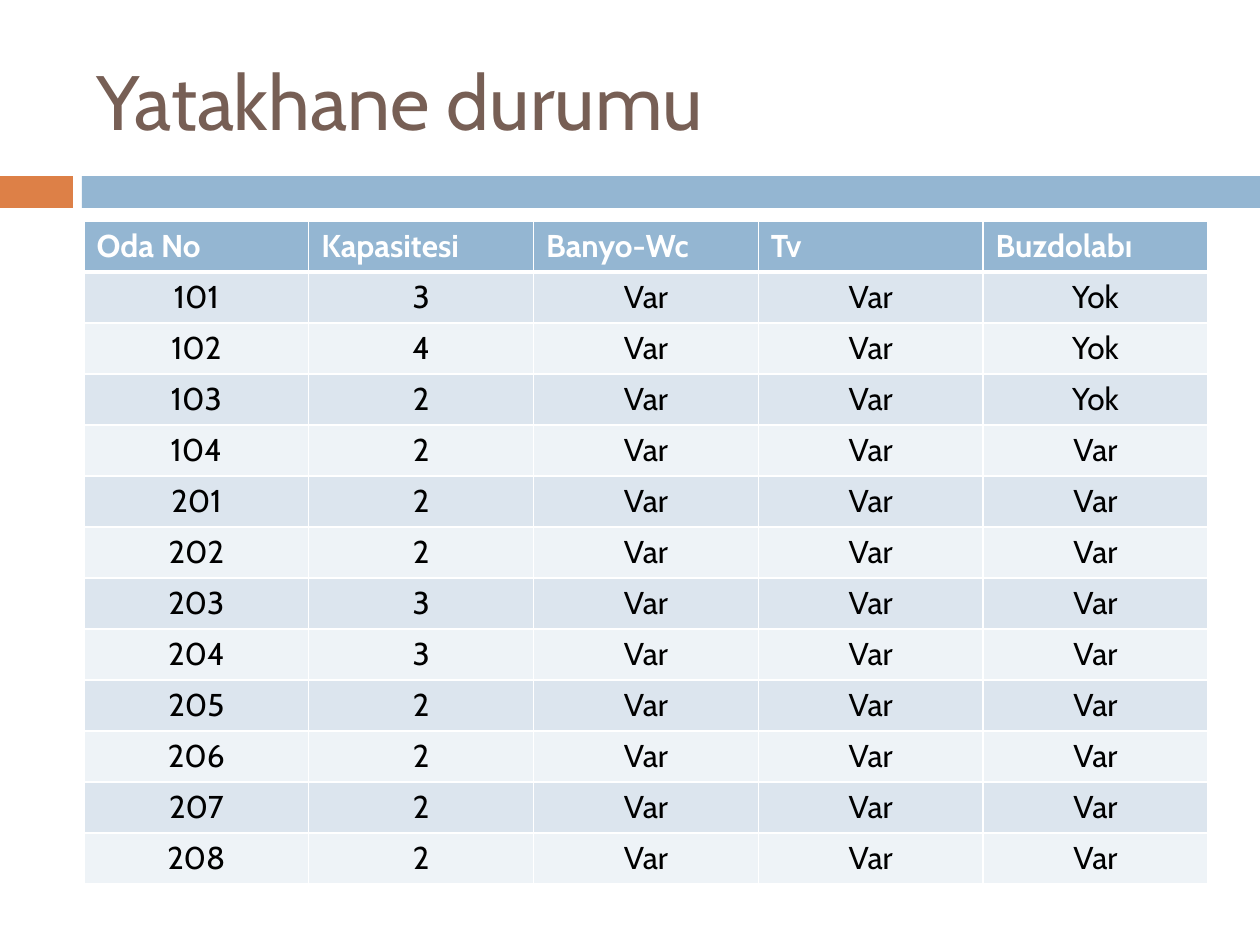
import pptx
import pptx.dml.color
import pptx.enum.shapes
import pptx.enum.text
import pptx.oxml
import pptx.oxml.ns
import pptx.util

PX = 914400 / 126  # EMU in one pixel
FONT = "Cabin"
WHITE = pptx.dml.color.RGBColor(0xFF, 0xFF, 0xFF)
BLACK = pptx.dml.color.RGBColor(0x00, 0x00, 0x00)
BROWN = pptx.dml.color.RGBColor(0x77, 0x5F, 0x55)
ORANGE = pptx.dml.color.RGBColor(0xDD, 0x80, 0x47)
BLUE = pptx.dml.color.RGBColor(0x94, 0xB6, 0xD2)
BAND_DARK = pptx.dml.color.RGBColor(0xDC, 0xE5, 0xEE)
BAND_LIGHT = pptx.dml.color.RGBColor(0xEE, 0xF3, 0xF7)

HEADERS = ["Oda No", "Kapasitesi", "Banyo-Wc", "Tv", "Buzdolabı"]
CAPACITIES = {
    "101": "3", "102": "4", "103": "2", "104": "2",
    "201": "2", "202": "2", "203": "3", "204": "3",
    "205": "2", "206": "2", "207": "2", "208": "2",
}
ROOMS_WITHOUT_FRIDGE = ["101", "102", "103"]


def add_text(paragraph, text, size, color, bold=False):
    run = paragraph.add_run()
    run.text = text
    run.font.name = FONT
    run.font.size = pptx.util.Pt(size)
    run.font.color.rgb = color
    run.font.bold = bold


def add_border(cell, side, points):
    cell._tc.get_or_add_tcPr().append(pptx.oxml.parse_xml(
        f'<a:{side} {pptx.oxml.ns.nsdecls("a")} w="{pptx.util.Pt(points)}">'
        f'<a:solidFill><a:srgbClr val="{WHITE}"/></a:solidFill></a:{side}>'))


presentation = pptx.Presentation()
presentation.slide_width = round(1260 * PX)
presentation.slide_height = round(945 * PX)
slide = presentation.slides.add_slide(presentation.slide_layouts[6])

# Bars under the title
for left, width, color in [(0, 73, ORANGE), (82, 1178, BLUE)]:
    bar = slide.shapes.add_shape(
        pptx.enum.shapes.MSO_SHAPE.RECTANGLE,
        round(left * PX), round(176 * PX), round(width * PX), round(32 * PX))
    bar.shadow.inherit = False
    bar.fill.solid()
    bar.fill.fore_color.rgb = color
    bar.line.fill.background()

# Title
title = slide.shapes.add_textbox(
    round(84 * PX), round(32 * PX), round(1124 * PX), round(136 * PX))
title.text_frame.word_wrap = True
title.text_frame.vertical_anchor = pptx.enum.text.MSO_ANCHOR.MIDDLE
add_text(title.text_frame.paragraphs[0], "Yatakhane durumu", 44, BROWN)

# Room table
rows = [HEADERS]
for room, capacity in CAPACITIES.items():
    fridge = "Yok" if room in ROOMS_WITHOUT_FRIDGE else "Var"
    rows.append([room, capacity, "Var", "Var", fridge])

table = slide.shapes.add_table(
    len(rows), len(HEADERS),
    round(84 * PX), round(221 * PX), round(1124 * PX), round(51 * len(rows) * PX)).table

for row_index, values in enumerate(rows):
    is_header = row_index == 0
    if is_header:
        fill_color = BLUE
    else:
        fill_color = BAND_DARK if row_index % 2 else BAND_LIGHT
    for column_index, value in enumerate(values):
        cell = table.cell(row_index, column_index)
        add_border(cell, "lnL", 1)
        add_border(cell, "lnR", 1)
        add_border(cell, "lnT", 3 if row_index == 1 else 1)
        add_border(cell, "lnB", 3 if is_header else 1)
        cell.fill.solid()
        cell.fill.fore_color.rgb = fill_color
        paragraph = cell.text_frame.paragraphs[0]
        if not is_header:
            paragraph.alignment = pptx.enum.text.PP_ALIGN.CENTER
        add_text(paragraph, value, 18, WHITE if is_header else BLACK, is_header)

presentation.save("out.pptx")
